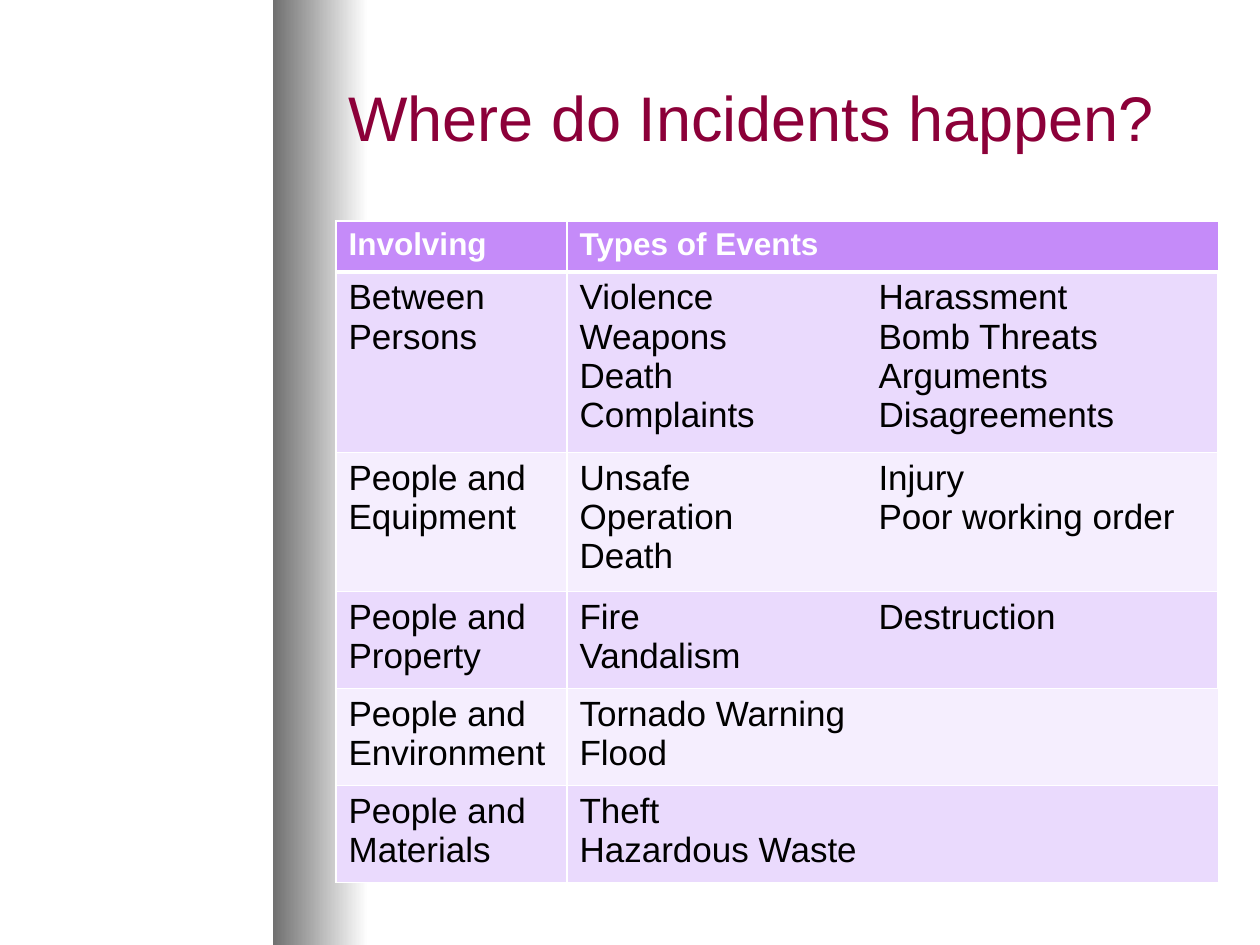
from lxml.etree import SubElement
from pptx import Presentation
from pptx.dml.color import RGBColor
from pptx.enum.shapes import MSO_SHAPE as Preset
from pptx.enum.text import MSO_ANCHOR as Anchor
from pptx.oxml.ns import qn
from pptx.util import Emu, Pt

PX = 914400 / 126
HEADINGS = ("Involving", "Types of Events")
INCIDENTS = (
    ("Between Persons",
     "Violence\nWeapons\nDeath\nComplaints",
     "Harassment\nBomb Threats\nArguments\nDisagreements"),
    ("People and Equipment", "Unsafe Operation\nDeath", "Injury\nPoor working order"),
    ("People and Property", "Fire\nVandalism", "Destruction"),
    ("People and Environment", "Tornado Warning\nFlood"),
    ("People and Materials", "Theft\nHazardous Waste"),
)
COLUMN_WIDTHS = (231, 299, 352)
ROW_HEIGHTS = (51, 180, 139, 97, 97, 97)
BANDS = ("F5EEFE", "EADAFD")


def px(length):
    """Turn pixels into EMU."""
    return Emu(round(length * PX))


def color(value):
    """Turn a hex string into a colour."""
    return RGBColor.from_string(value)


class SlideBuilder:
    """Hold the style and the current slide, and draw each kind of element."""

    title_style = {"name": "Arial", "size": Pt(36), "bold": False}
    heading_style = {"name": "Arial", "size": Pt(18), "bold": True}
    body_style = {"name": "Arial", "size": Pt(20), "bold": False}

    def __init__(self, slide):
        """Keep the slide to draw on."""
        self.slide = slide

    def set_text(self, frame, text, style, ink):
        """Fill a text frame with one paragraph per line of text."""
        frame.text = text
        for paragraph in frame.paragraphs:
            for attribute, value in style.items():
                setattr(paragraph.font, attribute, value)
            paragraph.font.color.rgb = color(ink)

    def gradient(self, left, top, width, height, start, end):
        """Draw a borderless rectangle that fades from left to right."""
        fade = self.slide.shapes.add_shape(
            Preset.RECTANGLE, px(left), px(top), px(width), px(height))
        fade.shadow.inherit = False
        fade.line.fill.background()
        fade.fill.gradient()
        fade.fill.gradient_angle = 0
        for stop, shade in zip(fade.fill.gradient_stops, (start, end)):
            stop.color.rgb = color(shade)

    def title(self, left, top, width, height, text, ink):
        """Set the heading of the slide."""
        frame = self.slide.shapes.add_textbox(
            px(left), px(top), px(width), px(height)).text_frame
        frame.word_wrap = True
        frame.vertical_anchor = Anchor.MIDDLE
        self.set_text(frame, text, self.title_style, ink)

    def borders(self, cell, **widths):
        """Give a cell white edges, with no line where the width is zero."""
        properties = cell._tc.get_or_add_tcPr()
        for side in "LRTB":
            width = widths.get(side, 1)
            edge = SubElement(properties, qn(f"a:ln{side}"), w=str(Pt(width)))
            if width:
                paint = SubElement(edge, qn("a:solidFill"))
                SubElement(paint, qn("a:srgbClr"), val="FFFFFF")
            else:
                SubElement(edge, qn("a:noFill"))

    def table(self, left, top, rows, widths, heights):
        """Draw a banded table whose short rows span the last columns."""
        grid = self.slide.shapes.add_table(
            len(heights), len(widths), px(left), px(top),
            px(sum(widths)), px(sum(heights))).table
        for column, width in zip(grid.columns, widths):
            column.width = px(width)
        for index, (texts, height) in enumerate(zip(rows, heights)):
            grid.rows[index].height = px(height)
            header = index == 0
            band = "C58BF9" if header else BANDS[index % 2]
            style = self.heading_style if header else self.body_style
            edges = {"T": 3 if index == 1 else 1, "B": 3 if header else 1}
            for position in range(len(widths)):
                cell = grid.cell(index, position)
                self.borders(cell, L=int(position < 2), R=int(position != 1), **edges)
                cell.fill.solid()
                cell.fill.fore_color.rgb = color(band)
                if position < len(texts):
                    self.set_text(cell.text_frame, texts[position], style,
                                  "FFFFFF" if header else "000000")
            if len(texts) < len(widths):
                grid.cell(index, len(texts) - 1).merge(grid.cell(index, len(widths) - 1))


def main():
    """Build and save the slide."""
    deck = Presentation()
    deck.slide_width, deck.slide_height = px(1260), px(945)
    builder = SlideBuilder(deck.slides.add_slide(deck.slide_layouts[6]))
    builder.gradient(273, 0, 95, 945, "707070", "FFFFFF")
    builder.title(336, 32, 882, 168, "Where do Incidents happen?", "8C0039")
    builder.table(336, 221, (HEADINGS, *INCIDENTS), COLUMN_WIDTHS, ROW_HEIGHTS)
    deck.save("out.pptx")


if __name__ == "__main__":
    main()
